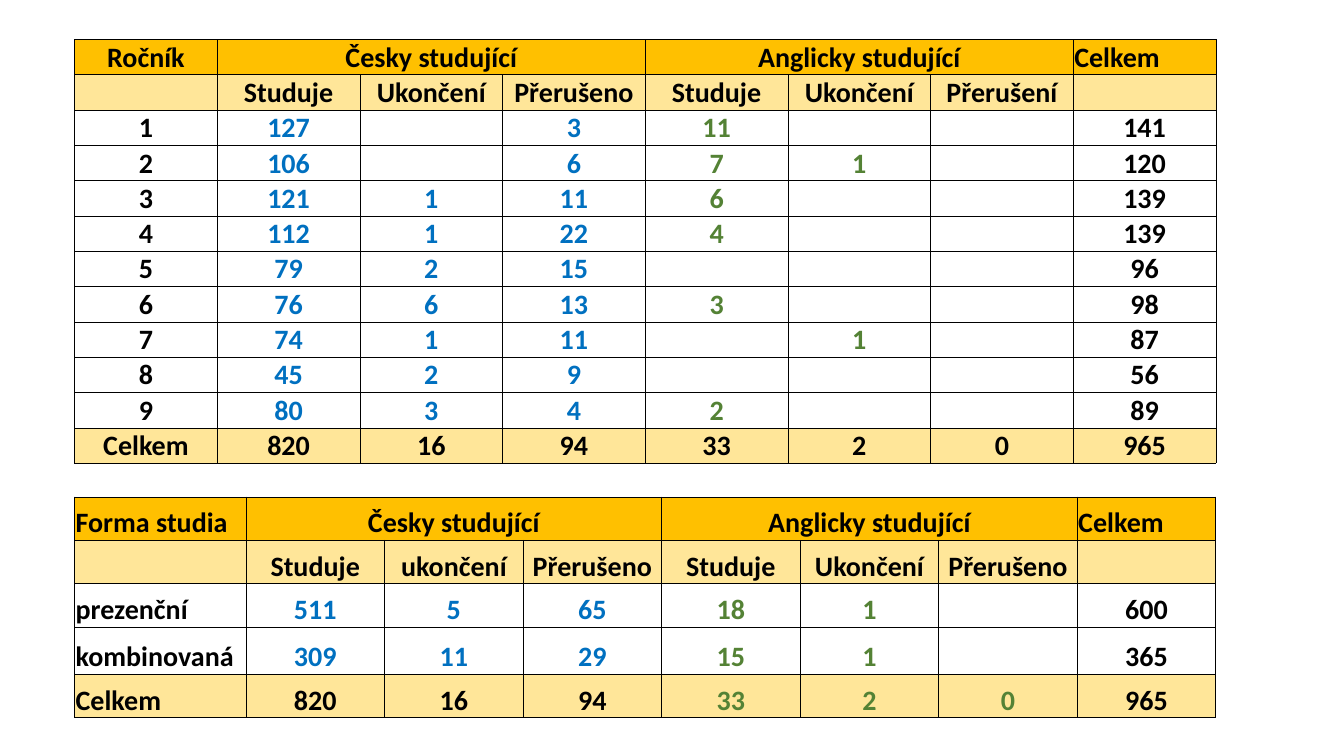
from lxml.etree import SubElement
from pptx import Presentation
from pptx.dml.color import RGBColor
from pptx.enum.text import MSO_ANCHOR, PP_ALIGN
from pptx.oxml.ns import qn
from pptx.util import Inches, Pt

AMBER, CREAM = "FFC000", "FFE699"
BLACK, BLUE, GREEN = "000000", "0070C0", "548235"
GROUPS = ["Česky studující", "", "", "Anglicky studující", "", "", "Celkem"]

YEARS = [
    ["Ročník", *GROUPS],
    ["", "Studuje", "Ukončení", "Přerušeno", "Studuje", "Ukončení", "Přerušení", ""],
    [1, 127, "", 3, 11, "", "", 141],
    [2, 106, "", 6, 7, 1, "", 120],
    [3, 121, 1, 11, 6, "", "", 139],
    [4, 112, 1, 22, 4, "", "", 139],
    [5, 79, 2, 15, "", "", "", 96],
    [6, 76, 6, 13, 3, "", "", 98],
    [7, 74, 1, 11, "", 1, "", 87],
    [8, 45, 2, 9, "", "", "", 56],
    [9, 80, 3, 4, 2, "", "", 89],
    ["Celkem", 820, 16, 94, 33, 2, 0, 965],
]
FORMS = [
    ["Forma studia", *GROUPS],
    ["", "Studuje", "ukončení", "Přerušeno", "Studuje", "Ukončení", "Přerušeno", ""],
    ["prezenční", 511, 5, 65, 18, 1, "", 600],
    ["kombinovaná", 309, 11, 29, 15, 1, "", 365],
    ["Celkem", 820, 16, 94, 33, 2, 0, 965],
]
LEFT, WIDTH = 0.74, 11.32
TABLES = [
    dict(rows=YEARS, top=0.39, first_col=WIDTH / 8, heights=[0.35] * 12,
         label_align=PP_ALIGN.CENTER, total_colors=[BLACK] * 8),
    dict(rows=FORMS, top=4.93, first_col=1.7, heights=[0.43, 0.43, 0.43, 0.47, 0.43],
         label_align=PP_ALIGN.LEFT, total_colors=[BLACK] * 4 + [GREEN] * 3 + [BLACK]),
]
BODY_COLORS = [BLACK] + [BLUE] * 3 + [GREEN] * 3 + [BLACK]


def rgb(color):
    """Turn a hex string into a colour."""
    return RGBColor.from_string(color)


def add_borders(cell):
    """Draw a thin black line on each side of a cell."""
    tc_pr = cell._tc.get_or_add_tcPr()
    for side in ("lnL", "lnR", "lnT", "lnB"):
        ln = SubElement(tc_pr, qn(f"a:{side}"), w=str(Pt(0.5)))
        fill = SubElement(ln, qn("a:solidFill"))
        SubElement(fill, qn("a:srgbClr"), val=BLACK)


def style_cell(cell, text, fill, color, align):
    """Write and format one cell."""
    add_borders(cell)
    if fill:
        cell.fill.solid()
        cell.fill.fore_color.rgb = rgb(fill)
    else:
        cell.fill.background()
    cell.margin_left = cell.margin_right = cell.margin_top = Inches(0.01)
    cell.margin_bottom = 0
    cell.vertical_anchor = MSO_ANCHOR.BOTTOM
    cell.text = str(text)
    p = cell.text_frame.paragraphs[0]
    p.alignment = align
    p.font.name, p.font.size, p.font.bold = "Calibri", Pt(20), True
    p.font.color.rgb = rgb(color)


def add_count_table(s, rows, top, first_col, heights, label_align, total_colors):
    """Add one table of student counts."""
    last_row, last_col = len(rows) - 1, len(rows[0]) - 1
    table = s.shapes.add_table(len(rows), len(rows[0]), Inches(LEFT), Inches(top),
                               Inches(WIDTH), Inches(sum(heights))).table
    table.first_row = table.horz_banding = False
    for c, column in enumerate(table.columns):
        column.width = Inches((WIDTH - first_col) / last_col if c else first_col)
    for r, values in enumerate(rows):
        table.rows[r].height = Inches(heights[r])
        fill = AMBER if r == 0 else CREAM if r in (1, last_row) else None
        colors = [BLACK] * 8 if r < 2 else total_colors if r == last_row else BODY_COLORS
        for c, text in enumerate(values):
            align = label_align if c == 0 else PP_ALIGN.CENTER
            if (r, c) == (0, last_col):
                align = PP_ALIGN.LEFT
            style_cell(table.cell(r, c), text, fill, colors[c], align)
    for c in (1, 4):
        table.cell(0, c).merge(table.cell(0, c + 2))


def main():
    """Build the slide and save it."""
    prs = Presentation()
    prs.slide_width, prs.slide_height = Inches(13.33), Inches(7.5)
    s = prs.slides.add_slide(prs.slide_layouts[6])
    for spec_values in TABLES:
        add_count_table(s, **spec_values)
    prs.save("out.pptx")


if __name__ == "__main__":
    main()
